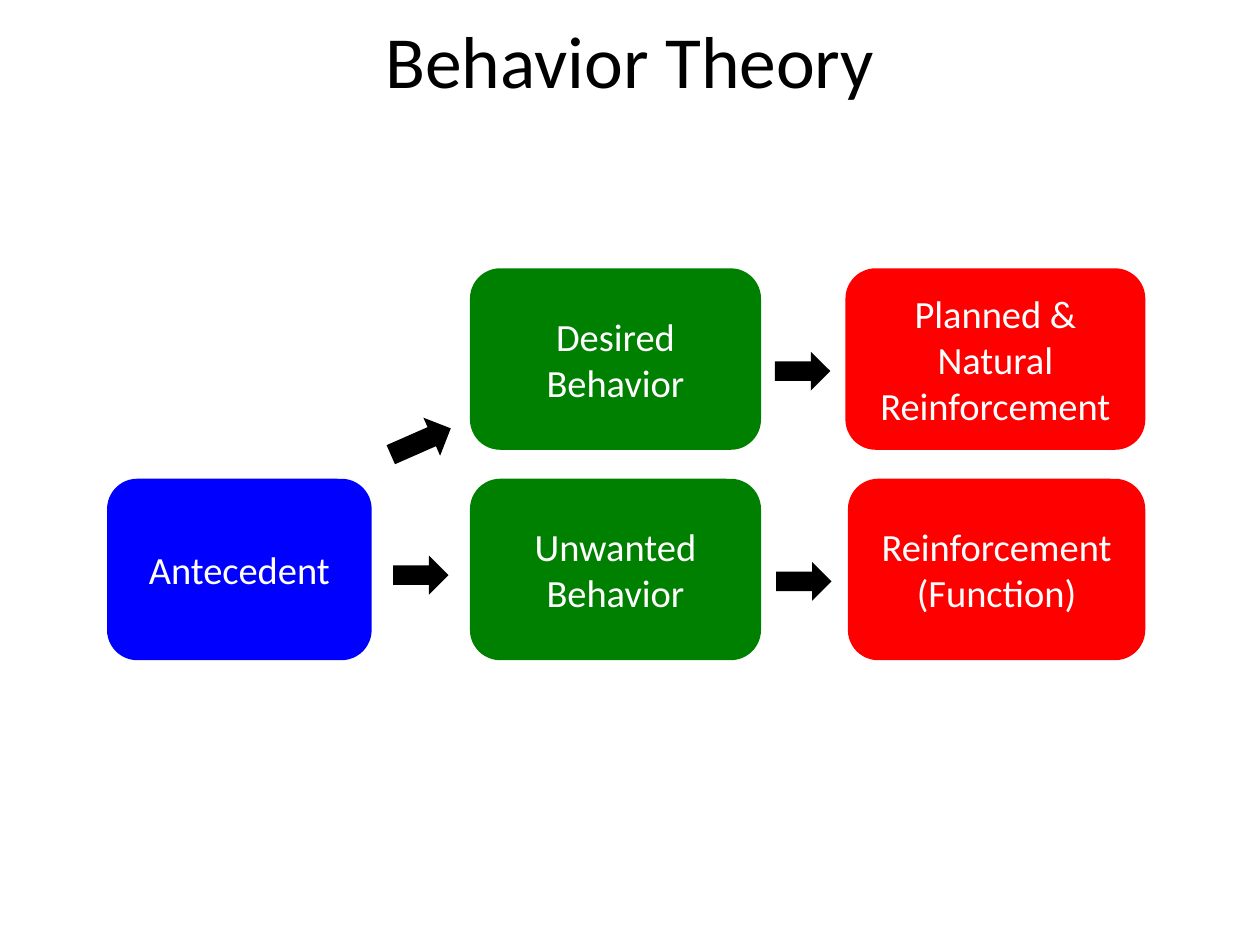
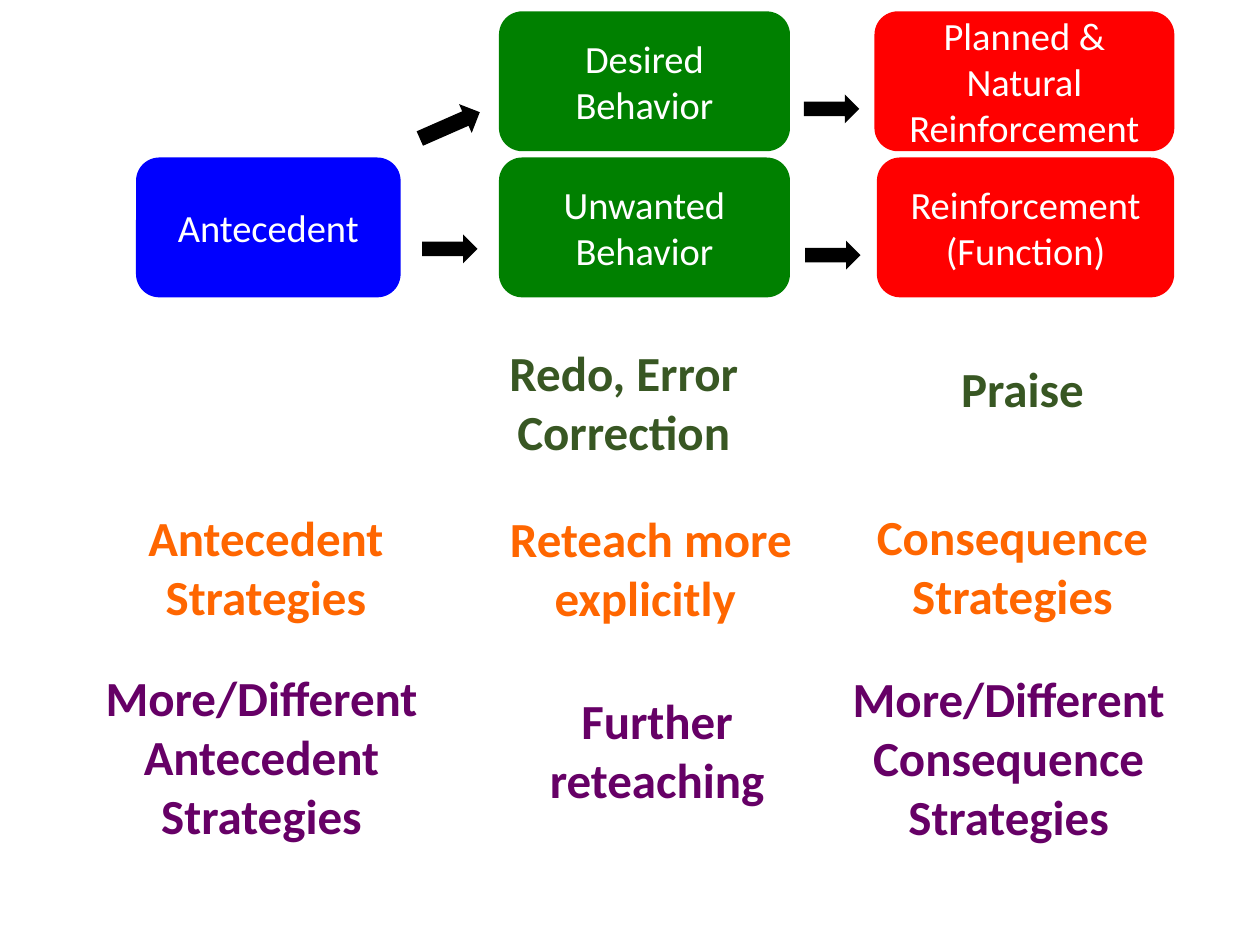
"""Build two slides on behavior theory and the strategies that follow from it."""
from pptx import Presentation
from pptx.dml import color
from pptx.enum import shapes, text
from pptx.util import Inches, Pt

FONT = "Calibri"
BLACK, WHITE = "000000", "FFFFFF"
BLUE, GREEN, RED = "0000FF", "008000", "FF0000"
DARK_GREEN, ORANGE, PURPLE = "385723", "FF6600", "660066"
ARROW_WIDTH = 0.44
DIAGONAL_WIDTH, DIAGONAL_ANGLE, DIAGONAL_GAP = 0.52, 336.3, 0.13

TITLE = "Behavior Theory"
UPPER, LOWER = 0, 1
# label, row, left, width, fill
BOXES = [
    ("Antecedent", LOWER, 0.85, 2.1, BLUE),
    ("Unwanted Behavior", LOWER, 3.73, 2.31, GREEN),
    ("Reinforcement (Function)", LOWER, 6.73, 2.36, RED),
    ("Desired Behavior", UPPER, 3.73, 2.31, GREEN),
    ("Planned & Natural Reinforcement", UPPER, 6.71, 2.38, RED),
]
# row, left, drop below the top of the row
ARROWS = [(LOWER, 3.12, 0.61), (LOWER, 6.16, 0.66), (UPPER, 6.15, 0.66)]
DIAGONAL_LEFT = 3.08

FLOW_ON_THEORY = dict(row_tops=(2.13, 3.8), box_height=1.44, shift=0,
                      arrow_height=0.31, diagonal_height=0.33)
FLOW_ON_STRATEGIES = dict(row_tops=(0.09, 1.25), box_height=1.11, shift=0.23,
                          arrow_height=0.23, diagonal_height=0.25)

# colour, then text, left, top, width, height of each strategy
STRATEGIES = [
    (DARK_GREEN, [("Redo, Error Correction", 3.77, 2.67, 2.36, 1.04),
                  ("Praise", 6.92, 2.8, 2.39, 0.57)]),
    (ORANGE, [("Antecedent Strategies", 0.84, 3.98, 2.54, 1.04),
              ("Consequence Strategies", 6.3, 3.97, 3.47, 1.04),
              ("Reteach more explicitly ", 3.43, 3.99, 3.47, 1.04)]),
    (PURPLE, [("More/Different Antecedent Strategies", 0.63, 5.25, 2.89, 1.51),
              ("More/Different Consequence Strategies", 6.27, 5.26, 3.47, 1.51),
              ("Further\vreteaching", 3.48, 5.43, 3.47, 1.04)]),
]


def rgb(value):
    return color.RGBColor.from_string(value)


def write(shape, content, size, colour, bold=False):
    frame = shape.text_frame
    frame.word_wrap = True
    paragraph = frame.paragraphs[0]
    paragraph.text = content
    paragraph.alignment = text.PP_ALIGN.CENTER
    for run in paragraph.runs:
        run.font.name = FONT
        run.font.size = Pt(size)
        run.font.bold = bold
        run.font.color.rgb = rgb(colour)


def add_text(slide, content, bounds, size, colour, bold=False):
    box = slide.shapes.add_textbox(*map(Inches, bounds))
    write(box, content, size, colour, bold)
    return box


def add_filled(slide, kind, bounds, fill):
    shape = slide.shapes.add_shape(kind, *map(Inches, bounds))
    shape.shadow.inherit = False
    shape.fill.solid()
    shape.fill.fore_color.rgb = rgb(fill)
    shape.line.fill.background()
    return shape


def add_flow(slide, row_tops, box_height, shift, arrow_height, diagonal_height):
    preset = shapes.MSO_SHAPE
    for label, row, left, width, fill in BOXES:
        bounds = (left + shift, row_tops[row], width, box_height)
        box = add_filled(slide, preset.ROUNDED_RECTANGLE, bounds, fill)
        box.text_frame.vertical_anchor = text.MSO_ANCHOR.MIDDLE
        write(box, label, 22, WHITE)
    for row, left, drop in ARROWS:
        bounds = (left + shift, row_tops[row] + drop, ARROW_WIDTH, arrow_height)
        add_filled(slide, preset.RIGHT_ARROW, bounds, BLACK)
    diagonal_top = row_tops[LOWER] - DIAGONAL_GAP - diagonal_height
    bounds = (DIAGONAL_LEFT + shift, diagonal_top, DIAGONAL_WIDTH, diagonal_height)
    add_filled(slide, preset.RIGHT_ARROW, bounds, BLACK).rotation = DIAGONAL_ANGLE


def main():
    presentation = Presentation()
    presentation.slide_width, presentation.slide_height = Inches(10), Inches(7.5)
    blank = presentation.slide_layouts[6]

    theory = presentation.slides.add_slide(blank)
    add_flow(theory, **FLOW_ON_THEORY)
    add_text(theory, TITLE, (0.5, 0.07, 9, 1.14), 42, BLACK)

    strategies = presentation.slides.add_slide(blank)
    add_flow(strategies, **FLOW_ON_STRATEGIES)
    for colour, entries in STRATEGIES:
        for content, *bounds in entries:
            box = add_text(strategies, content, bounds, 28, colour, bold=True)
            box.text_frame.auto_size = text.MSO_AUTO_SIZE.SHAPE_TO_FIT_TEXT

    presentation.save("out.pptx")


if __name__ == "__main__":
    main()
